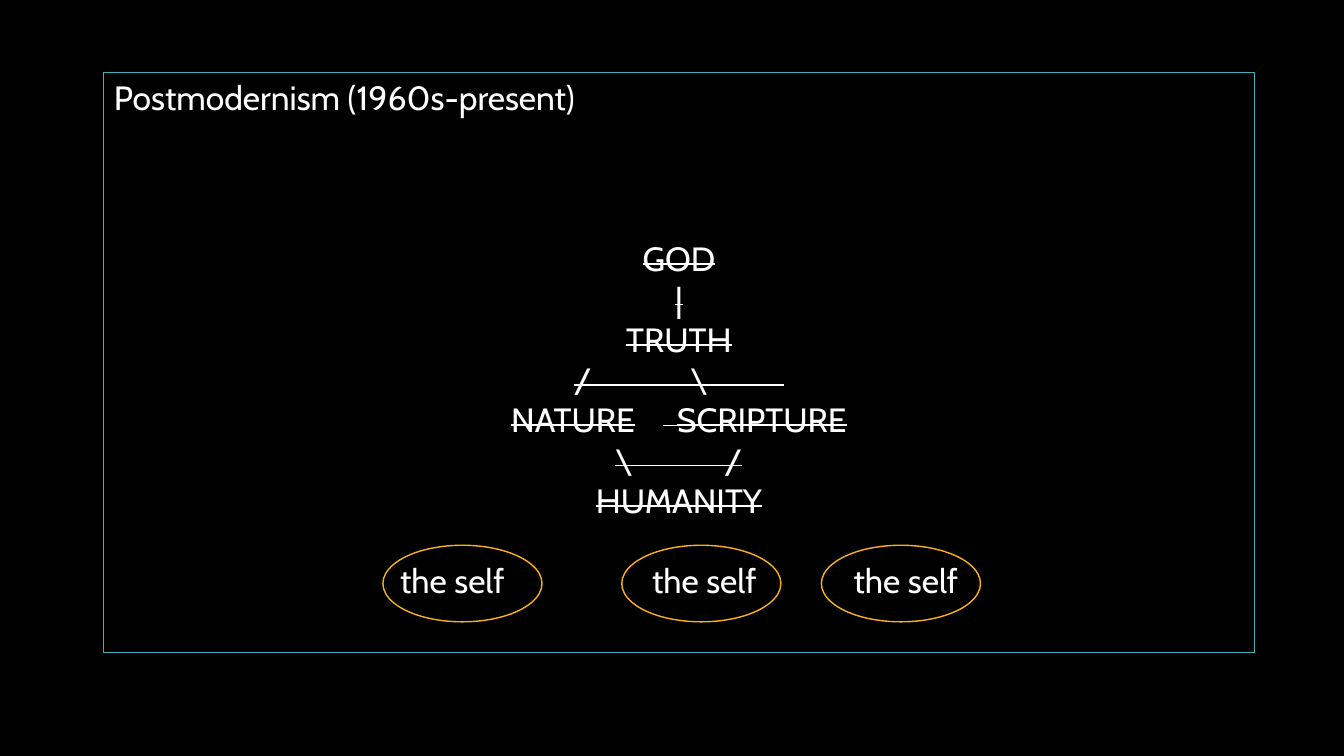
from dataclasses import dataclass

import pptx
import pptx.dml.color
import pptx.enum.shapes
import pptx.enum.text
import pptx.oxml
import pptx.oxml.ns
import pptx.util

Cm, Pt = pptx.util.Cm, pptx.util.Pt
RGB = pptx.dml.color.RGBColor
PP_ALIGN = pptx.enum.text.PP_ALIGN
SHAPE = pptx.enum.shapes.MSO_SHAPE


@dataclass(frozen=True)
class Theme:
    font: str = "Cabin"
    size: float = 24
    background: RGB = RGB(0, 0, 0)
    text: RGB = RGB(255, 255, 255)
    frame: RGB = RGB(0x41, 0xAE, 0xBD)
    oval: RGB = RGB(0xFC, 0xB1, 0x1C)


@dataclass(frozen=True)
class Word:
    """A word centred on a position in cm, on a numbered row."""
    text: str
    center: float
    row: int
    struck: bool = True


@dataclass(frozen=True)
class Strike:
    """A strike across the gap between words of a row, in cm."""
    left: float
    right: float
    row: int


THEME = Theme()
FRAME = (2.62, 1.83, 28.99, 14.61)
AXIS = 17.11
FIRST_ROW, ROW_PITCH, STRIKE_DROP = 6.0, 1.015, 0.66
WORDS = (
    Word("GOD", AXIS, 0),
    Word("|", AXIS, 1),
    Word("TRUTH", AXIS, 2),
    Word("/", 14.69, 3),
    Word("\\", 17.61, 3),
    Word("NATURE", 14.44, 4),
    Word("SCRIPTURE", 19.2, 4),
    Word("\\", 15.72, 5),
    Word("/", 18.48, 5),
    Word("HUMANITY", AXIS, 6),
    Word("the self", 11.4, 8, struck=False),
    Word("the self", 17.75, 8, struck=False),
    Word("the self", 22.83, 8, struck=False),
)
STRIKES = (
    Strike(14.49, 19.76, 3),
    Strike(16.71, 17.1, 4),
    Strike(15.52, 18.7, 5),
)
OVAL_LEFTS = (9.65, 15.67, 20.7)
OVAL_TOP, OVAL_WIDTH, OVAL_HEIGHT = 13.74, 4.01, 1.93


def row_top(row: int) -> float:
    return FIRST_ROW + row * ROW_PITCH


def add_outline(s, shape: SHAPE, box: tuple[float, ...], color: RGB, width: float) -> None:
    sp = s.shapes.add_shape(shape, *(Cm(v) for v in box))
    sp.shadow.inherit = False
    sp.fill.background()
    sp.line.color.rgb = color
    sp.line.width = Pt(width)


def write(tf, text: str, align: PP_ALIGN, struck: bool = False,
          side: float = 0, top: float = 0) -> None:
    """Fill a text frame with one line, with side and top margins in cm."""
    tf.word_wrap = True
    tf.auto_size = pptx.enum.text.MSO_AUTO_SIZE.NONE
    tf.vertical_anchor = pptx.enum.text.MSO_ANCHOR.TOP
    tf.margin_left = tf.margin_right = Cm(side)
    tf.margin_top, tf.margin_bottom = Cm(top), 0
    p = tf.paragraphs[0]
    p.alignment = align
    p.line_spacing = 1.0
    r = p.add_run()
    r.text = text
    r.font.name = THEME.font
    r.font.size = Pt(THEME.size)
    r.font.color.rgb = THEME.text
    if struck:
        r.font._element.set("strike", "sngStrike")


def add_title(s) -> None:
    title = s.shapes.title
    left, top, width, _ = FRAME
    title.left, title.top = Cm(left), Cm(top)
    title.width, title.height = Cm(width), Cm(1.3)
    write(title.text_frame, "Postmodernism (1960s-present)", PP_ALIGN.LEFT, side=0.25, top=0.1)


def add_word(s, word: Word) -> None:
    width = 0.6 + 0.5 * len(word.text)
    sp = s.shapes.add_textbox(
        Cm(word.center - width / 2), Cm(row_top(word.row)), Cm(width), Cm(ROW_PITCH)
    )
    write(sp.text_frame, word.text, PP_ALIGN.CENTER, word.struck)


def add_strike(s, strike: Strike) -> None:
    y = Cm(row_top(strike.row) + STRIKE_DROP)
    line = s.shapes.add_connector(
        pptx.enum.shapes.MSO_CONNECTOR.STRAIGHT, Cm(strike.left), y, Cm(strike.right), y
    )
    line.line.color.rgb = THEME.text
    line.line.width = Pt(1)
    spPr = line._element.spPr
    spPr.append(spPr.makeelement(pptx.oxml.ns.qn("a:effectLst"), {}))


def main() -> None:
    prs = pptx.Presentation()
    prs.slide_width, prs.slide_height = Cm(33.87), Cm(19.05)
    s = prs.slides.add_slide(prs.slide_layouts.get_by_name("Title Only"))
    s.background.fill.solid()
    s.background.fill.fore_color.rgb = THEME.background
    add_title(s)
    add_outline(s, SHAPE.RECTANGLE, FRAME, THEME.frame, 0.75)
    for left in OVAL_LEFTS:
        add_outline(s, SHAPE.OVAL, (left, OVAL_TOP, OVAL_WIDTH, OVAL_HEIGHT), THEME.oval, 1)
    for word in WORDS:
        add_word(s, word)
    for strike in STRIKES:
        add_strike(s, strike)
    prs.save("out.pptx")


if __name__ == "__main__":
    main()
